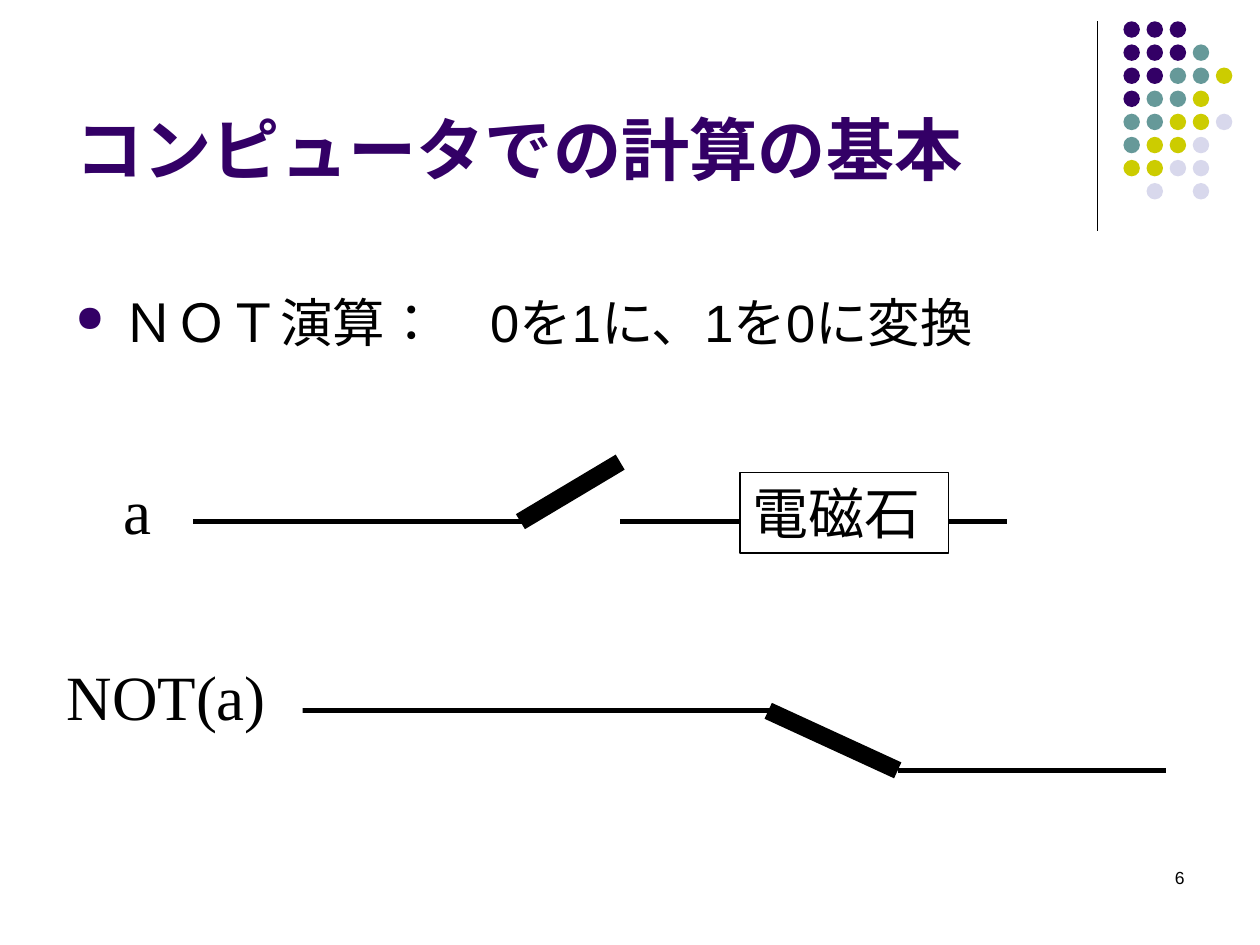
from lxml import etree
from pptx import Presentation
from pptx.dml.color import RGBColor
from pptx.enum.lang import MSO_LANGUAGE_ID as LANG
from pptx.enum.shapes import MSO_CONNECTOR, MSO_SHAPE
from pptx.enum.text import MSO_ANCHOR as ANCHOR, PP_ALIGN as ALIGN
from pptx.oxml.ns import qn
from pptx.util import Pt

BLACK = RGBColor(0x00, 0x00, 0x00)
WHITE = RGBColor(0xFF, 0xFF, 0xFF)
PURPLE = RGBColor(0x33, 0x00, 0x66)
TEAL = RGBColor(0x66, 0x99, 0x99)
OLIVE = RGBColor(0xCC, 0xCC, 0x00)
LILAC = RGBColor(0xD8, 0xD8, 0xEC)

DOT_COLORS = {"P": PURPLE, "T": TEAL, "O": OLIVE, "L": LILAC}
DOT_ROWS = ["PPP", "PPPT", "PPTTO", "PTTO", "TTOOL", "TOOL", "OOLL", " L L"]


def add_line(s, x1, y1, x2, y2, width):
    line = s.shapes.add_connector(
        MSO_CONNECTOR.STRAIGHT, Pt(x1), Pt(y1), Pt(x2), Pt(y2))
    line.line.color.rgb = BLACK
    line.line.width = Pt(width)
    etree.SubElement(line._element.spPr, qn("a:effectLst"))
    return line


def add_shape(s, kind, x, y, w, h, fill, outlined=False):
    sp = s.shapes.add_shape(kind, Pt(x), Pt(y), Pt(w), Pt(h))
    sp.shadow.inherit = False
    sp.fill.solid()
    sp.fill.fore_color.rgb = fill
    if outlined:
        sp.line.color.rgb = BLACK
        sp.line.width = Pt(0.75)
    else:
        sp.line.fill.background()
    return sp


def write(sp, text, size, font, color=BLACK, bold=False,
          align=ALIGN.LEFT, anchor=ANCHOR.TOP, wrap=True):
    tf = sp.text_frame
    tf.word_wrap = wrap
    tf.vertical_anchor = anchor
    tf.text = text
    p = tf.paragraphs[0]
    p.alignment = align
    r = p.runs[0]
    r.font.size = Pt(size)
    r.font.name = font
    r.font.bold = bold
    r.font.color.rgb = color
    r.font.language_id = LANG.JAPANESE
    return p


def add_text(s, x, y, w, h, text, size, font, **style):
    sp = s.shapes.add_textbox(Pt(x), Pt(y), Pt(w), Pt(h))
    return write(sp, text, size, font, **style)


def add_ornament(s, x, y, h, pitch=13.2, dot=9.4):
    add_line(s, x, y, x, y + h, 0.75)
    for row, codes in enumerate(DOT_ROWS):
        for col, code in enumerate(codes):
            if code in DOT_COLORS:
                add_shape(s, MSO_SHAPE.OVAL, x + 15 + col * pitch,
                          y + row * pitch, dot, dot, DOT_COLORS[code])


def add_bullet(s, x, y, w, h, text):
    p = add_text(s, x, y, w, h, text, 30, "Arial")
    pPr = p._p.get_or_add_pPr()
    pPr.set("marL", str(Pt(27)))
    pPr.set("indent", str(-Pt(27)))
    color = etree.SubElement(pPr, qn("a:buClr"))
    etree.SubElement(color, qn("a:srgbClr"), val=str(PURPLE))
    etree.SubElement(pPr, qn("a:buSzPct"), val="70000")
    etree.SubElement(pPr, qn("a:buChar"), char="●")


def add_input_circuit(s, x, y, w):
    wire = y + 32.4
    add_line(s, x + 47, wire, x + 240, wire, 3)
    add_line(s, x + 291, wire, x + w, wire, 3)
    add_line(s, x + 234, wire, x + 291, wire - 34, 10)
    magnet = add_shape(s, MSO_SHAPE.RECTANGLE, x + 359.5, y + 4.3, 119, 46,
                       WHITE, outlined=True)
    write(magnet, "電磁石", 32, "Times New Roman")
    add_text(s, x, y, 34.5, 50.4, "a", 36, "Times New Roman", wrap=False)


def add_output_circuit(s, x, y, w):
    wire, contact = y + 34, y + 68
    add_line(s, x + 79, wire, x + 414, wire, 3)
    add_line(s, x + 408, wire, x + 482, contact, 10)
    add_line(s, x + 482, contact, x + w, contact, 3)
    label = add_shape(s, MSO_SHAPE.RECTANGLE, x, y, 142, 50.4, WHITE)
    write(label, "NOT(a)", 36, "Times New Roman")


def main():
    prs = Presentation()
    prs.slide_width, prs.slide_height = Pt(720), Pt(540)
    s = prs.slides.add_slide(prs.slide_layouts[6])
    add_ornament(s, 627, 12.2, 119.8)
    add_text(s, 516, 492, 168, 36, "6", 10, "Arial", align=ALIGN.RIGHT)
    add_text(s, 36, 9.4, 594, 102, "コンピュータでの計算の基本", 39, "Arial",
             color=PURPLE, bold=True, anchor=ANCHOR.BOTTOM)
    add_bullet(s, 36, 162, 684, 345, "ＮＯＴ演算：　0を1に、1を0に変換")
    add_input_circuit(s, 63.4, 265.7, 512)
    add_output_circuit(s, 31, 372.2, 635)
    prs.save("out.pptx")


if __name__ == "__main__":
    main()
